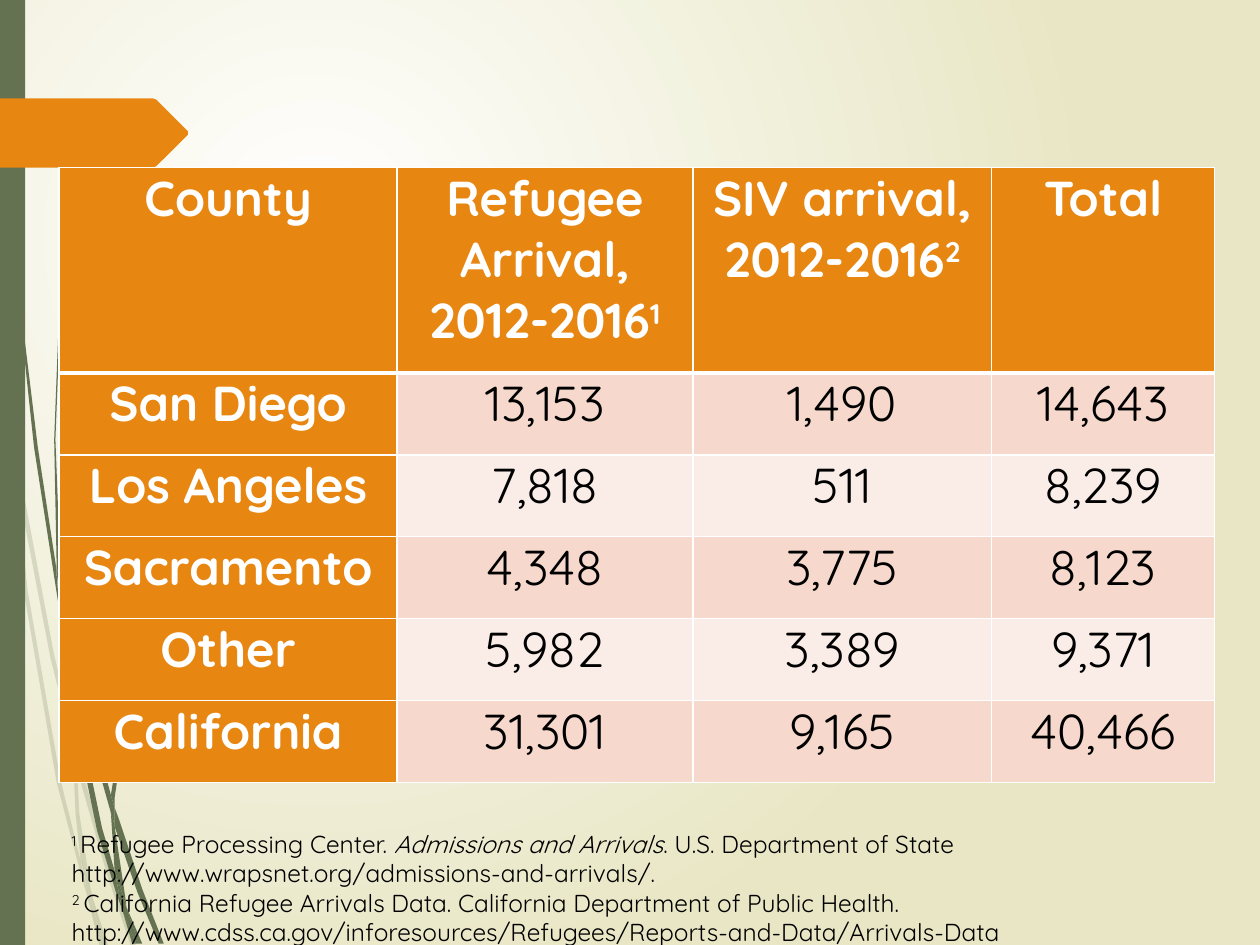
from dataclasses import dataclass

from lxml.etree import SubElement
from pptx import Presentation
from pptx.dml.color import RGBColor
from pptx.enum.shapes import MSO_SHAPE as Preset
from pptx.enum.text import MSO_ANCHOR as Anchor, MSO_AUTO_SIZE as AutoSize, PP_ALIGN as Align
from pptx.oxml.ns import qn
from pptx.util import Pt

PX = 9144  # EMU in one px, 100 px to the inch


@dataclass(frozen=True)
class Theme:
    font: str = "Quicksand"
    table_size: int = 28
    note_size: int = 14
    white: str = "FFFFFF"
    black: str = "000000"
    sand: str = "E8E6C4"
    green: str = "647252"
    orange: str = "E78712"
    bands: tuple = ("F6D9CC", "FAEDE7")


THEME = Theme()

# Outlines of the grass blades: the faint tuft and the solid tuft
FAINT_BLADES = [
    [(8, 350), (6, 322), (0, 282), (0, 299), (7, 344)],
    [(40, 522), (59, 599), (59, 586), (43, 520), (10, 345), (12, 376)],
    [(64, 607), (61, 596), (61, 610), (85, 694), (104, 751), (108, 751), (88, 692)],
    [(83, 751), (86, 751), (73, 711)],
    [(64, 683), (48, 619), (22, 469), (12, 376), (8, 350), (19, 470), (45, 621),
     (64, 693), (70, 714), (69, 707)],
    [(58, 599), (60, 646), (64, 683), (67, 692), (73, 711), (72, 706), (63, 646),
     (61, 610), (61, 608)],
    [(61, 584), (76, 462), (111, 349), (159, 245), (187, 198), (201, 175), (217, 154),
     (217, 153), (201, 175), (186, 197), (158, 244), (110, 348), (75, 461), (59, 584),
     (59, 586), (61, 596)],
    [(70, 714), (79, 751), (82, 751)],
    [(61, 608), (61, 610), (61, 596), (59, 586), (58, 599)],
    [(67, 692), (65, 683), (69, 707), (70, 714), (82, 751), (83, 751), (73, 711)],
]
SOLID_BLADES = [
    [(5, 110), (14, 233), (27, 355), (46, 477), (47, 481), (45, 457), (45, 453),
     (30, 355), (15, 232), (6, 109), (4, 48), (3, 0), (2, 0), (3, 48)],
    [(73, 592), (88, 645), (88, 633), (88, 631), (77, 590), (50, 472), (53, 505)],
    [(94, 649), (91, 641), (91, 656), (109, 708), (126, 749), (130, 749), (113, 706)],
    [(91, 691), (81, 657), (60, 556), (53, 505), (47, 477), (56, 557), (77, 659),
     (92, 708), (97, 722), (96, 717)],
    [(50, 472), (48, 453), (44, 349), (48, 245), (52, 193), (58, 141), (51, 193),
     (47, 245), (43, 349), (45, 449), (49, 472)],
    [(110, 749), (113, 749), (100, 719)],
    [(47, 477), (53, 505), (50, 472), (49, 472), (45, 449), (45, 453)],
    [(91, 633), (103, 552), (131, 476), (169, 406), (191, 374), (203, 359), (216, 344),
     (215, 344), (203, 358), (191, 373), (168, 405), (129, 474), (101, 551), (88, 631),
     (91, 641)],
    [(97, 722), (105, 749), (108, 749)],
    [(88, 645), (91, 691), (96, 706), (100, 719), (100, 716), (91, 656), (90, 651)],
    [(88, 645), (90, 651), (91, 656), (91, 641), (88, 631), (88, 633)],
    [(96, 706), (91, 691), (96, 717), (97, 722), (108, 749), (110, 749), (100, 719)],
]

COLUMN_WIDTHS = (268, 235, 237, 177)
HEADER_HEIGHT, ROW_HEIGHT = 163, 65
# A cell is a list of (text, format) runs or a plain string
RAISED = {"raised": True}
ROWS = [
    ["County", [("Refugee Arrival, 2012-2016", {}), ("1", RAISED)],
     [("SIV arrival, 2012-2016", {}), ("2", RAISED)], "Total"],
    ["San Diego", "13,153", "1,490", "14,643"],
    ["Los Angeles", "7,818", "511", "8,239"],
    ["Sacramento", "4,348", "3,775", "8,123"],
    ["Other", "5,982", "3,389", "9,371"],
    ["California", "31,301", "9,165", "40,466"],
]
NOTES = [
    [("1 ", RAISED), ("Refugee Processing Center. ", {}),
     ("Admissions and Arrivals", {"italic": True}),
     (". U.S. Department of State http://www.wrapsnet.org/admissions-and-arrivals/.", {})],
    [("2 ", RAISED),
     ("California Refugee Arrivals Data. California Department of Public Health. "
      "http://www.cdss.ca.gov/inforesources/Refugees/Reports-and-Data/Arrivals-Data", {})],
]


def set_attributes(target, values):
    for name, value in values.items():
        setattr(target, name, value)


def paint(shape, color, alpha=None):
    shape.shadow.inherit = False
    shape.fill.solid()
    shape.fill.fore_color.rgb = RGBColor.from_string(color)
    shape.line.fill.background()
    if alpha:
        color_node = next(shape._element.spPr.iter(qn("a:srgbClr")))
        SubElement(color_node, qn("a:alpha")).set("val", str(alpha * 1000))


def write_runs(paragraph, runs, size, color, bold=False):
    for text, extra in runs:
        run = paragraph.add_run()
        run.text = text
        set_attributes(run.font, {"name": THEME.font, "size": Pt(size), "bold": bold,
                                  "italic": extra.get("italic", False)})
        run.font.color.rgb = RGBColor.from_string(color)
        if extra.get("raised"):
            run.font._element.set("baseline", "30000")


def add_outline(slide, left, top, points, color, alpha=None):
    builder = slide.shapes.build_freeform(*points[0], scale=PX)
    builder.add_line_segments(points[1:], close=True)
    paint(builder.convert_to_shape(left * PX, top * PX), color, alpha)


def add_background(slide):
    fill = slide.background.fill
    fill.gradient()
    for stop, position, color in zip(fill.gradient_stops, (0, 1), (THEME.white, THEME.sand)):
        stop.position = position
        stop.color.rgb = RGBColor.from_string(color)
    linear = next(slide._element.iter(qn("a:lin")))
    gradient = linear.getparent()
    gradient.remove(linear)
    circle = SubElement(gradient, qn("a:path"), {"path": "circle"})
    SubElement(circle, qn("a:fillToRect"), {"l": "50000", "t": "50000", "r": "100000", "b": "100000"})


def add_side_decoration(slide, left, top, height):
    # Grass
    for blades, alpha in ((FAINT_BLADES, 20), (SOLID_BLADES, None)):
        for points in blades:
            add_outline(slide, left, top, points, THEME.green, alpha)
    # Side bar
    bar = slide.shapes.add_shape(Preset.RECTANGLE, left * PX, top * PX, 20 * PX, height * PX)
    paint(bar, THEME.green)
    # Pointed tag
    tag = [(0, 0), (121, 0), (124, 1), (149, 26), (149, 29), (124, 54), (121, 55), (0, 55)]
    add_outline(slide, left, top + 78, tag, THEME.orange)


def set_borders(cell, widths):
    properties = cell._tc.get_or_add_tcPr()
    for index, (side, width) in enumerate(widths.items()):
        line = SubElement(properties, qn(f"a:ln{side}"), {"w": str(Pt(width))})
        solid = SubElement(line, qn("a:solidFill"))
        SubElement(solid, qn("a:srgbClr"), {"val": THEME.white})
        properties.insert(index, line)


def add_arrivals_table(slide, left, top):
    width = sum(COLUMN_WIDTHS)
    height = HEADER_HEIGHT + ROW_HEIGHT * (len(ROWS) - 1)
    table = slide.shapes.add_table(len(ROWS), len(COLUMN_WIDTHS), left * PX, top * PX,
                                   width * PX, height * PX).table
    set_attributes(table, {"first_row": True, "first_col": True, "horz_banding": True})
    for column, column_width in zip(table.columns, COLUMN_WIDTHS):
        column.width = column_width * PX
    for r, values in enumerate(ROWS):
        table.rows[r].height = (ROW_HEIGHT if r else HEADER_HEIGHT) * PX
        for c, value in enumerate(values):
            cell = table.cell(r, c)
            heading = r == 0 or c == 0
            set_attributes(cell, {"margin_left": 7 * PX, "margin_right": 7 * PX, "margin_top": 0,
                                  "margin_bottom": 0, "vertical_anchor": Anchor.TOP})
            cell.fill.solid()
            fill_color = THEME.orange if heading else THEME.bands[(r - 1) % 2]
            cell.fill.fore_color.rgb = RGBColor.from_string(fill_color)
            set_borders(cell, {"L": 1, "R": 1, "T": 3 if r == 1 else 1, "B": 3 if r == 0 else 1})
            paragraph = cell.text_frame.paragraphs[0]
            paragraph.alignment = Align.CENTER
            runs = [(value, {})] if isinstance(value, str) else value
            write_runs(paragraph, runs, THEME.table_size,
                       THEME.white if heading else THEME.black, heading)


def add_notes(slide, left, top, width, height):
    frame = slide.shapes.add_textbox(left * PX, top * PX, width * PX, height * PX).text_frame
    set_attributes(frame, {"word_wrap": True, "auto_size": AutoSize.SHAPE_TO_FIT_TEXT,
                           "vertical_anchor": Anchor.TOP, "margin_top": 36 * PX})
    for index, runs in enumerate(NOTES):
        paragraph = frame.add_paragraph() if index else frame.paragraphs[0]
        write_runs(paragraph, runs, THEME.note_size, THEME.black)


def main():
    presentation = Presentation()
    set_attributes(presentation, {"slide_width": 1000 * PX, "slide_height": 750 * PX})
    slide = presentation.slides.add_slide(presentation.slide_layouts[6])
    add_background(slide)
    add_side_decoration(slide, 0, 0, 750)
    add_arrivals_table(slide, 47, 133)
    add_notes(slide, 47, 622, 917, 135)
    presentation.save("out.pptx")


if __name__ == "__main__":
    main()
